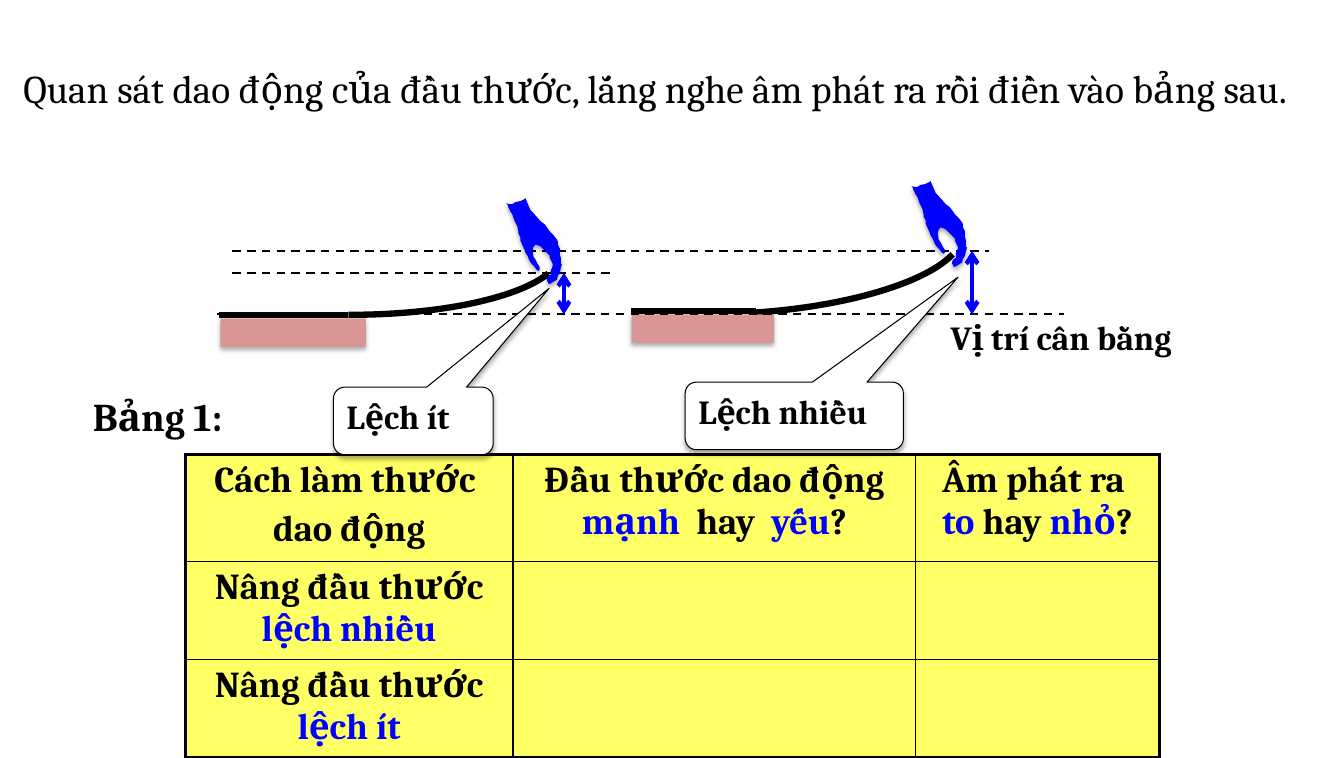
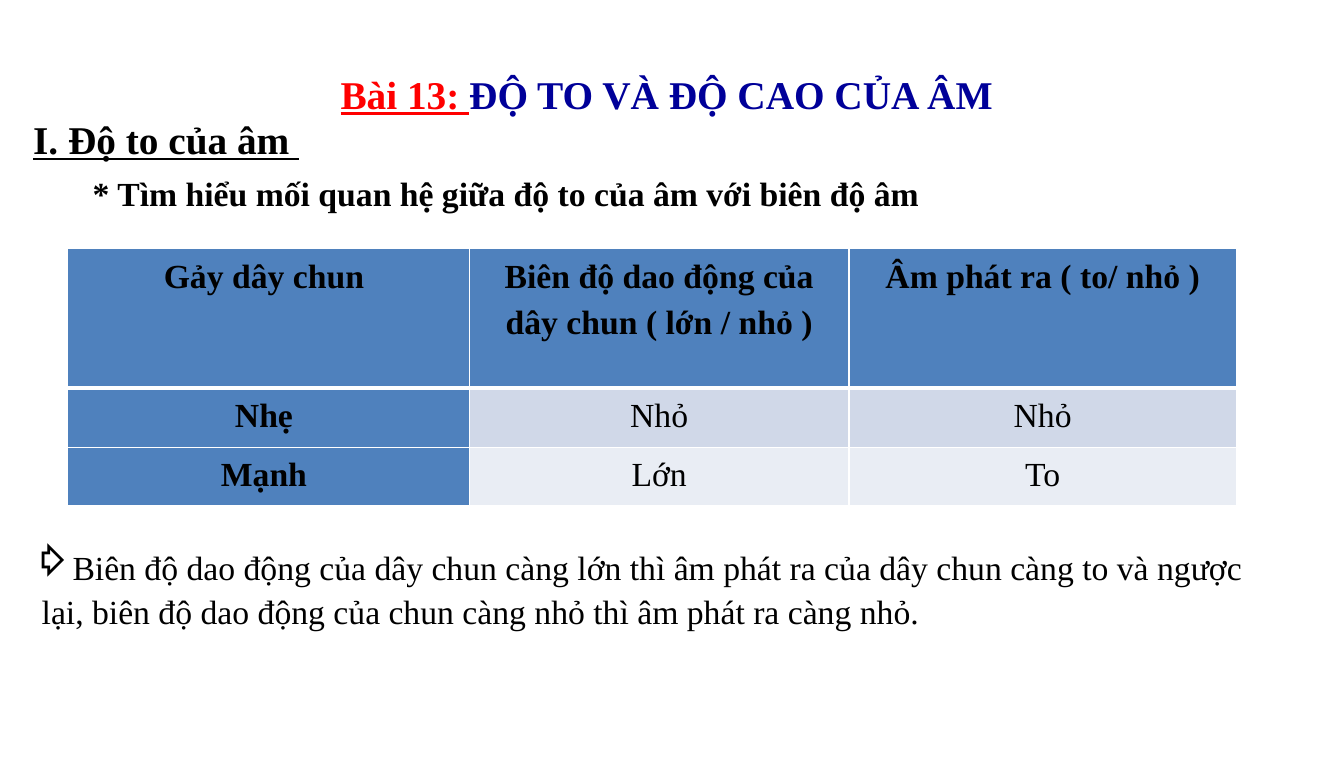
from lxml.etree import SubElement
from pptx import Presentation
from pptx.dml.color import RGBColor
from pptx.enum.dml import MSO_LINE
from pptx.enum.shapes import MSO_CONNECTOR, MSO_SHAPE
from pptx.enum.text import MSO_ANCHOR, MSO_AUTO_SIZE, PP_ALIGN
from pptx.oxml.ns import qn
from pptx.util import Pt

COLOURS = {
    "black": "000000", "white": "FFFFFF", "blue": "0000FF", "navy": "000099",
    "red": "FF0000", "yellow": "FFFF66", "bench": "D99694", "header": "4F81BD",
    "band_dark": "D0D8E8", "band_light": "E9EDF4",
}
SERIF, TIMES = "Cambria", "Times New Roman"
TITLE_SIZE, BODY_SIZE, TABLE_SIZE = 28, 24, 26
TITLE_ONLY = 5

# Outline of a pinching hand, in hundredths of an inch from its top left corner
HAND_UNIT = Pt(0.72)
HAND = [
    (27, 48), (26, 52), (27, 58), (29, 61), (31, 65), (33, 68), (33, 71), (32, 72),
    (30, 71), (28, 68), (25, 65), (23, 62), (21, 57), (19, 54), (18, 51), (14, 42),
    (14, 39), (12, 35), (12, 33), (11, 28), (9, 24), (8, 22), (7, 19), (6, 16),
    (4, 13), (3, 11), (2, 9), (1, 6), (0, 5), (3, 6), (6, 6), (9, 4), (14, 3),
    (18, 1), (19, 0), (21, 5), (24, 12), (27, 15), (34, 23), (38, 26), (41, 30),
    (43, 33), (47, 37), (50, 41), (51, 43), (51, 46), (53, 50), (53, 56), (54, 59),
    (54, 65), (55, 66), (54, 69), (53, 74), (51, 77), (50, 81), (48, 82), (43, 85),
    (42, 85), (40, 81), (41, 78), (44, 76), (44, 72), (46, 67), (46, 65), (43, 59),
    (43, 57), (41, 55), (38, 52), (34, 48), (32, 47), (29, 46),
]


def colour(name):
    return RGBColor.from_string(COLOURS[name])


def write(para, spans, font=SERIF, size=BODY_SIZE, bold=True, align=PP_ALIGN.LEFT):
    """Fill a paragraph with spans: plain strings, or (text, colour name) pairs."""
    para.alignment = align
    para.font.name, para.font.size, para.font.bold = font, Pt(size), bold
    para.font.color.rgb = colour("black")
    for span in spans:
        text, tint = (span, None) if isinstance(span, str) else span
        run = para.add_run()
        run.text = text
        if tint:
            run.font.color.rgb = colour(tint)


def set_title(page, area, spans, **style):
    title = page.shapes.title
    title.left, title.top, title.width, title.height = map(Pt, area)
    title.text_frame.auto_size = MSO_AUTO_SIZE.NONE
    title.text_frame.word_wrap = True
    write(title.text_frame.paragraphs[0], spans, size=TITLE_SIZE, **style)
    return title.text_frame


def add_text(page, area, spans, **style):
    box = page.shapes.add_textbox(*map(Pt, area))
    box.text_frame.word_wrap = True
    write(box.text_frame.paragraphs[0], spans, **style)
    return box.text_frame


def paint(shape, fill, line=None, width=0.75, shadow=True):
    shape.fill.solid()
    shape.fill.fore_color.rgb = colour(fill)
    if line:
        shape.line.color.rgb = colour(line)
        shape.line.width = Pt(width)
    else:
        shape.line.fill.background()
    shape.shadow.inherit = False
    if shadow:
        effects = shape._element.spPr.find(qn("a:effectLst"))
        outer = SubElement(effects, qn("a:outerShdw"), blurRad=str(Pt(3.5)),
                           dist=str(Pt(2.2)), dir="5400000", rotWithShape="0")
        black = SubElement(outer, qn("a:srgbClr"), val=COLOURS["black"])
        SubElement(black, qn("a:alpha"), val="32000")


def add_line(shapes, start, end, tint="black", width=1.5, dashed=False, arrows=False):
    line = shapes.add_connector(MSO_CONNECTOR.STRAIGHT, *map(Pt, start + end))
    line.line.color.rgb = colour(tint)
    line.line.width = Pt(width)
    if dashed:
        line.line.dash_style = MSO_LINE.DASH
    properties = line._element.spPr
    if arrows:
        for tip in ("a:headEnd", "a:tailEnd"):
            SubElement(properties.find(qn("a:ln")), qn(tip), type="arrow")
    SubElement(properties, qn("a:effectLst"))


def add_ruler(page, arc, rotation, angles, bar, bench):
    """Draw a ruler clamped on a bench, with its free end bent upwards."""
    shapes = page.shapes.add_group_shape().shapes
    bend = shapes.add_shape(MSO_SHAPE.ARC, *map(Pt, arc))
    bend.rotation = rotation
    bend.adjustments[0], bend.adjustments[1] = angles
    paint(bend, "white", "black", 4.5, shadow=False)
    left, right, height = bar
    add_line(shapes, (left, height), (right, height), width=4.5)
    paint(shapes.add_shape(MSO_SHAPE.RECTANGLE, *map(Pt, bench)), "bench")


def add_callout(page, area, pointer, text):
    callout = page.shapes.add_shape(MSO_SHAPE.ROUNDED_RECTANGULAR_CALLOUT, *map(Pt, area))
    callout.adjustments[0], callout.adjustments[1] = pointer
    paint(callout, "white", "black")
    callout.text_frame.vertical_anchor = MSO_ANCHOR.TOP
    callout.text_frame.word_wrap = True
    write(callout.text_frame.paragraphs[0], [text])


def add_hand(page, left, top):
    builder = page.shapes.build_freeform(*HAND[0], scale=HAND_UNIT)
    builder.add_line_segments(HAND[1:], close=True)
    paint(builder.convert_to_shape(Pt(left), Pt(top)), "blue")


def add_grid(page, left, top, widths, heights):
    frame = page.shapes.add_table(len(heights), len(widths), Pt(left), Pt(top),
                                  Pt(sum(widths)), Pt(sum(heights)))
    table = frame.table
    table.first_row = table.horz_banding = False
    for column, width in zip(table.columns, widths):
        column.width = Pt(width)
    for row, height in zip(table.rows, heights):
        row.height = Pt(height)
    return table


def format_cell(cell, fill, line, widths):
    """Set the fill and the border widths (left, right, top, bottom)."""
    properties = cell._tc.get_or_add_tcPr()
    for side, width in zip("LRTB", widths):
        border = SubElement(properties, qn(f"a:ln{side}"), w=str(Pt(width)))
        solid = SubElement(border, qn("a:solidFill"))
        SubElement(solid, qn("a:srgbClr"), val=COLOURS[line])
    cell.fill.solid()
    cell.fill.fore_color.rgb = colour(fill)


def add_observation_table(page):
    rows = [
        [[["Cách làm thước "], ["dao động"]],
         [["Đầu thước dao động ", ("mạnh ", "blue"), " hay  ", ("yếu", "blue"), "?"]],
         [["Âm phát ra \v", ("to ", "blue"), "hay ", ("nhỏ", "blue"), "?"]]],
        [[["Nâng đầu thước ", ("lệch nhiều", "blue")]], [], []],
        [[["Nâng đầu thước ", ("lệch ít", "blue")]], [], []],
    ]
    table = add_grid(page, 132, 324, (233.5, 287, 173.5), (76.2, 69.6, 69.6))
    for i, row in enumerate(rows):
        for j, lines in enumerate(row):
            cell = table.cell(i, j)
            on_edge = (j == 0, j == 2, i == 0, i == 2)
            format_cell(cell, "yellow", "black", [2.25 if edge else 1 for edge in on_edge])
            frame = cell.text_frame
            for number, spans in enumerate(lines):
                para = frame.add_paragraph() if number else frame.paragraphs[0]
                para.space_before = Pt(5.2)
                write_cell_line(para, spans)


def write_cell_line(para, spans):
    """Write centred table text; a span ending in a vertical tab breaks the line."""
    first, *rest = spans
    if first.endswith("\v"):
        write(para, [first[:-1]], size=TABLE_SIZE, align=PP_ALIGN.CENTER)
        para.add_line_break()
        spans = rest
    write(para, spans, size=TABLE_SIZE, align=PP_ALIGN.CENTER)


def add_result_table(page):
    rows = [
        ["Gảy dây chun ", "Biên độ dao động của dây chun ( lớn / nhỏ )",
         "Âm phát ra ( to/ nhỏ )"],
        ["Nhẹ ", "Nhỏ", "Nhỏ"],
        ["Mạnh ", "Lớn", "To"],
    ]
    bands = ("header", "band_dark", "band_light")
    table = add_grid(page, 47.8, 177.2, (286.5, 270.7, 275.8), (99.4, 42.2, 41.2))
    for i, row in enumerate(rows):
        for j, text in enumerate(row):
            cell = table.cell(i, j)
            heading = i == 0 or j == 0
            format_cell(cell, "header" if heading else bands[i], "white",
                        (1, 1, 3 if i == 1 else 1, 3 if i == 0 else 1))
            cell.margin_left = cell.margin_right = Pt(5.4)
            cell.margin_top = cell.margin_bottom = 0
            para = cell.text_frame.paragraphs[0]
            para.line_spacing = 1.25
            para.space_before, para.space_after = Pt(1), Pt(3)
            write(para, [text], font=TIMES, bold=heading, align=PP_ALIGN.CENTER)


def add_conclusion(page):
    lines = [
        "Biên độ dao động của dây chun càng lớn thì âm phát ra của dây chun càng to và ngược",
        "lại, biên độ dao động của chun càng nhỏ thì âm phát ra càng nhỏ.",
    ]
    frame = add_text(page, (16.6, 398.2, 905.8, 58.3), lines[:1], font=TIMES, bold=False)
    write(frame.add_paragraph(), lines[1:], font=TIMES, bold=False)
    for para, indent in zip(frame.paragraphs, (-27, -21)):
        para.line_spacing = Pt(16.5)
        para.space_before, para.space_after = Pt(6), Pt(9)
        properties = para._p.get_or_add_pPr()
        properties.set("marL", str(Pt(27)))
        properties.set("indent", str(Pt(indent)))
    bullet = frame.paragraphs[0]._p.pPr
    bullet.find(qn("a:defRPr")).addprevious(SubElement(bullet, qn("a:buChar"), char="⇨"))


def build_experiment(page):
    frame = set_title(page, (9.4, 41.8, 940, 74.9), [
        "Quan sát dao động của đầu thước, lắng nghe âm phát ra rồi điền vào bảng sau."],
        bold=False)
    frame.vertical_anchor = MSO_ANCHOR.TOP
    add_observation_table(page)
    add_text(page, (21.6, 275.8, 181.4, 41), ["Bảng 1:"], size=TITLE_SIZE,
             align=PP_ALIGN.CENTER)

    add_ruler(page, (493.9, 31, 90, 293), 85.7, (165.47, 5.83),
              (449.3, 538.6, 221.8), (450, 223.9, 101.5, 20.2))
    add_ruler(page, (205.2, 29.5, 90, 299.5), 90, (165.79, 1.56),
              (156.2, 247.7, 224.2), (157, 226.8, 103.7, 20.2))

    balance, low, high = 224, 194.4, 178.6
    for left, right, height in ((154.8, 758.2, balance), (165.6, 704.9, high),
                                (165.6, 435.6, low)):
        add_line(page.shapes, (left, height), (right, height), dashed=True)
    for x, height in ((401.8, low), (692.6, high)):
        add_line(page.shapes, (x, height), (x, balance), "blue", 3, arrows=True)

    add_callout(page, (488.2, 272.2, 155.5, 48.2), (0.75, -2.05), "Lệch nhiều")
    add_callout(page, (237.6, 275.8, 113.8, 48.2), (0.85, -1.96), "Lệch ít")
    add_text(page, (670.3, 222.5, 179.3, 36), ["Vị trí cân bằng"])
    add_hand(page, 360.7, 141.1)
    add_hand(page, 649.4, 128.9)


def build_conclusion(page):
    frame = set_title(page, (47.5, 21.6, 861.8, 90),
                      [("Bài 13: ", "red"), ("ĐỘ TO VÀ ĐỘ CAO CỦA ÂM ", "navy")],
                      font=TIMES, align=PP_ALIGN.CENTER)
    frame.vertical_anchor = MSO_ANCHOR.MIDDLE
    frame.paragraphs[0].runs[0].font.underline = True
    heading = add_text(page, (16.6, 78.5, 509, 41), ["I. Độ to của âm "],
                       font=TIMES, size=TITLE_SIZE)
    heading.paragraphs[0].font.underline = True
    add_text(page, (59, 119.5, 659.5, 36.7),
             ["* Tìm hiểu mối quan hệ giữa độ to của âm với biên độ âm"], font=TIMES)
    add_result_table(page)
    add_conclusion(page)


def main():
    deck = Presentation()
    deck.slide_width, deck.slide_height = Pt(957.6), Pt(540)
    for build in (build_experiment, build_conclusion):
        build(deck.slides.add_slide(deck.slide_layouts[TITLE_ONLY]))
    deck.save("out.pptx")


if __name__ == "__main__":
    main()
